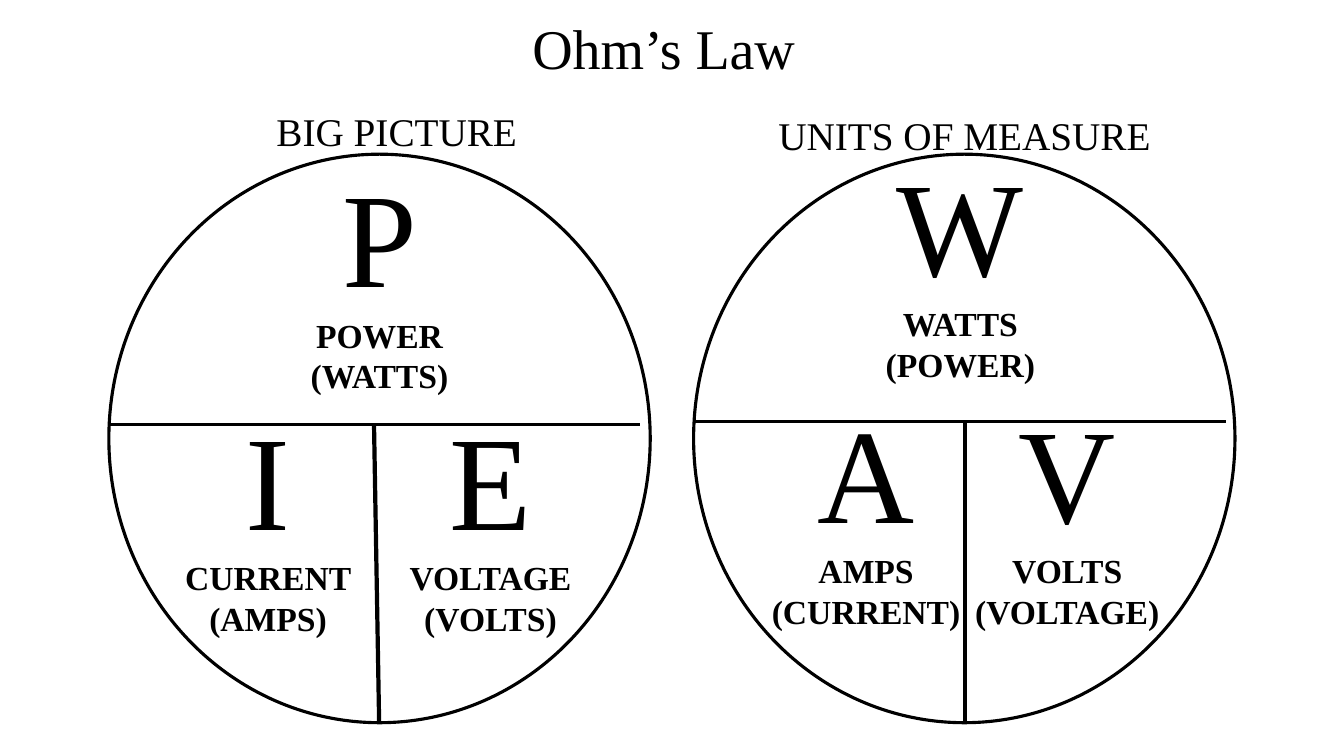
import pptx
import pptx.util
import pptx.dml.color
import pptx.enum.shapes
import pptx.enum.text
import pptx.oxml.ns
import lxml.etree

BLACK = pptx.dml.color.RGBColor(0x00, 0x00, 0x00)
FONT = "Times New Roman"
WIDE = pptx.util.Inches(13.33)
HIGH = pptx.util.Inches(7.5)
CENTER = pptx.enum.text.PP_ALIGN.CENTER
LEFT = pptx.enum.text.PP_ALIGN.LEFT

DISC_TOP, DISC_W, DISC_H = 20.4, 40.28, 75.2
DISC_END = DISC_TOP + DISC_H
CELL_H = 33.6

WHEELS = [
    {
        "left": 8.1, "end": 47.64, "row": 56.13, "stem": (27.83, 28.21),
        "head": ("BIG PICTURE", 14.1, 13.6),
        "cells": [
            (28.24, 19.6, 13, "P", "POWER", "(WATTS)"),
            (19.95, 51.73, 14.7, "I", "CURRENT", "(AMPS)"),
            (36.5, 51.73, 13.9, "E", "VOLTAGE", "(VOLTS)"),
        ],
    },
    {
        "left": 51.61, "end": 91.22, "row": 55.73, "stem": (71.79, 71.79),
        "head": ("UNITS OF MEASURE", 56.34, 14.13),
        "cells": [
            (71.46, 18.13, 13, "W", "WATTS", "(POWER)"),
            (64.44, 50.8, 16.5, "A", "AMPS", "(CURRENT)"),
            (79.41, 50.8, 15.2, "V", "VOLTS", "(VOLTAGE)"),
        ],
    },
]


def col(n):
    return round(WIDE * n / 100)


def row(n):
    return round(HIGH * n / 100)


def grid(x, y, w, h):
    return col(x), row(y), col(w), row(h)


def write(frame, lines, align):
    frame.word_wrap = False
    frame.auto_size = pptx.enum.text.MSO_AUTO_SIZE.NONE
    frame.vertical_anchor = pptx.enum.text.MSO_ANCHOR.TOP
    for i, (text, size, bold) in enumerate(lines):
        para = frame.paragraphs[0] if i == 0 else frame.add_paragraph()
        para.text = text
        para.alignment = align
        para.line_spacing = 1.0
        para.space_before = pptx.util.Pt(0)
        para.font.name = FONT
        para.font.size = pptx.util.Pt(size)
        para.font.bold = bold
        para.font.color.rgb = BLACK


def add_title(slide, text):
    title = slide.shapes.title
    title.left, title.top, title.width, title.height = grid(38.86, 1.07, 25.66, 10.27)
    write(title.text_frame, [(text, 40, False)], LEFT)


def add_text(slide, area, lines):
    box = slide.shapes.add_textbox(*area)
    write(box.text_frame, lines, CENTER)


def add_disc(slide, left):
    kind = pptx.enum.shapes.MSO_SHAPE.OVAL
    disc = slide.shapes.add_shape(kind, *grid(left, DISC_TOP, DISC_W, DISC_H))
    disc.shadow.inherit = False
    disc.fill.background()
    disc.line.color.rgb = BLACK
    disc.line.width = pptx.util.Pt(2.25)


def add_line(slide, x1, y1, x2, y2, width):
    kind = pptx.enum.shapes.MSO_CONNECTOR.STRAIGHT
    line = slide.shapes.add_connector(kind, col(x1), row(y1), col(x2), row(y2))
    line.line.color.rgb = BLACK
    line.line.width = pptx.util.Pt(width)
    props = line._element.spPr
    lxml.etree.SubElement(props, pptx.oxml.ns.qn("a:effectLst"))


def add_cell(slide, mid, top, width, sign, name, unit):
    area = grid(mid - width / 2, top, width, CELL_H)
    add_text(slide, area, [(sign, 96, False), (name, 24, True), (unit, 24, True)])


def add_wheel(slide, wheel):
    add_disc(slide, wheel["left"])
    for cell in wheel["cells"]:
        add_cell(slide, *cell)
    level = wheel["row"]
    top, foot = wheel["stem"]
    add_line(slide, wheel["left"], level, wheel["end"], level, 2.25)
    add_line(slide, top, level, foot, DISC_END, 3)
    text, x, y = wheel["head"]
    add_text(slide, grid(x, y, 30.83, 7.6), [(text, 28, False)])


def main():
    deck = pptx.Presentation()
    deck.slide_width, deck.slide_height = WIDE, HIGH
    slide = deck.slides.add_slide(deck.slide_layouts[5])
    add_title(slide, "Ohm’s Law")
    for wheel in WHEELS:
        add_wheel(slide, wheel)
    deck.save("out.pptx")


if __name__ == "__main__":
    main()
